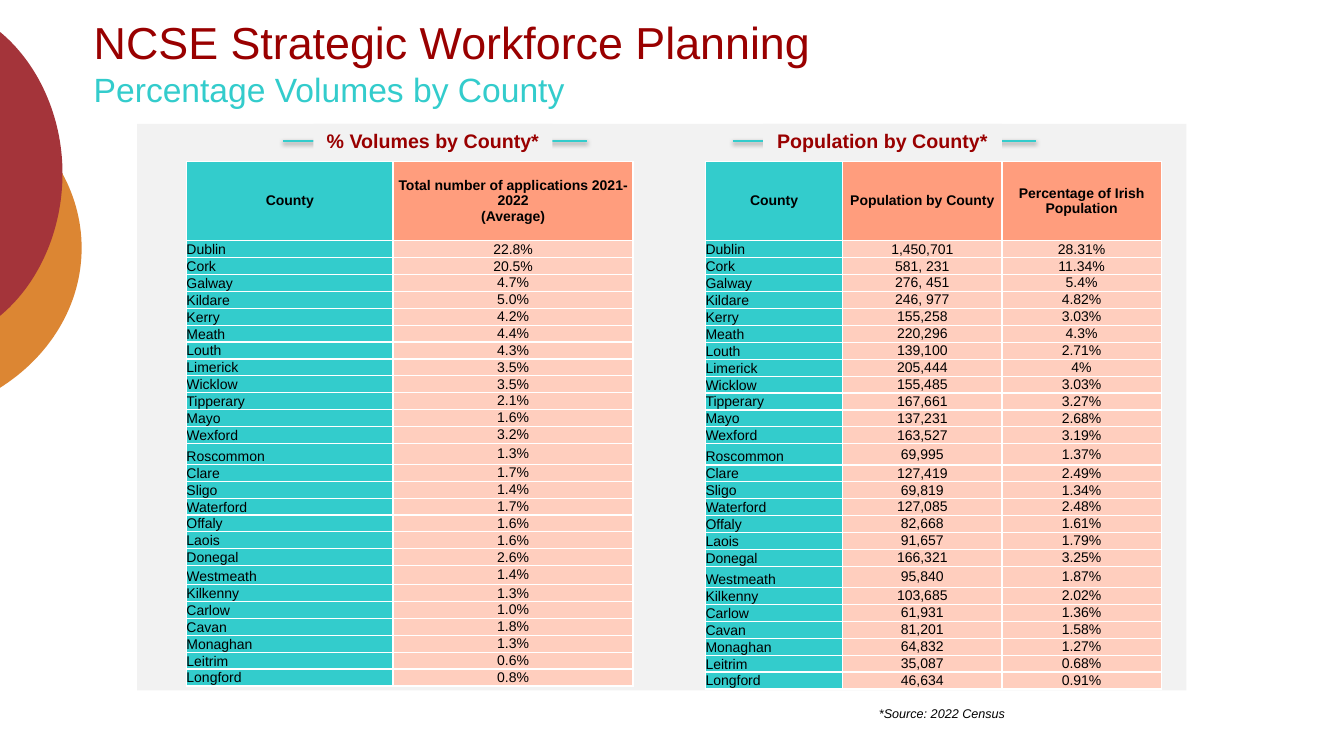
from lxml import etree
from pptx import Presentation
from pptx.dml.color import RGBColor
from pptx.enum.shapes import MSO_CONNECTOR as Connector, MSO_SHAPE as Shape
from pptx.enum.text import MSO_ANCHOR as Anchor, MSO_AUTO_SIZE as AutoSize, PP_ALIGN as Align
from pptx.oxml import parse_xml
from pptx.oxml.ns import nsdecls, qn
from pptx.util import Inches, Pt

RED, TEAL, BLACK, WHITE = "990000", "33CCCC", "000000", "FFFFFF"
PANEL, ORANGE, PEACH = "F2F2F2", "FF9D7D", "FFCEBE"
HEADER_HEIGHT = 0.79

# County, share of applications, population, share of population
COUNTIES = [
    ("Dublin", "22.8%", "1,450,701", "28.31%"),
    ("Cork", "20.5%", "581, 231", "11.34%"),
    ("Galway", "4.7%", "276, 451", "5.4%"),
    ("Kildare", "5.0%", "246, 977", "4.82%"),
    ("Kerry", "4.2%", "155,258", "3.03%"),
    ("Meath", "4.4%", "220,296", "4.3%"),
    ("Louth", "4.3%", "139,100", "2.71%"),
    ("Limerick", "3.5%", "205,444", "4%"),
    ("Wicklow", "3.5%", "155,485", "3.03%"),
    ("Tipperary", "2.1%", "167,661", "3.27%"),
    ("Mayo", "1.6%", "137,231", "2.68%"),
    ("Wexford", "3.2%", "163,527", "3.19%"),
    ("Roscommon", "1.3%", "69,995", "1.37%"),
    ("Clare", "1.7%", "127,419", "2.49%"),
    ("Sligo", "1.4%", "69,819", "1.34%"),
    ("Waterford", "1.7%", "127,085", "2.48%"),
    ("Offaly", "1.6%", "82,668", "1.61%"),
    ("Laois", "1.6%", "91,657", "1.79%"),
    ("Donegal", "2.6%", "166,321", "3.25%"),
    ("Westmeath", "1.4%", "95,840", "1.87%"),
    ("Kilkenny", "1.3%", "103,685", "2.02%"),
    ("Carlow", "1.0%", "61,931", "1.36%"),
    ("Cavan", "1.8%", "81,201", "1.58%"),
    ("Monaghan", "1.3%", "64,832", "1.27%"),
    ("Leitrim", "0.6%", "35,087", "0.68%"),
    ("Longford", "0.8%", "46,634", "0.91%"),
]


def color(value):
    return RGBColor.from_string(value)


class SlidePainter:
    def __init__(self, page, font="Arial"):
        self.page = page
        self.shapes = page.shapes
        self.font = font

    def style(self, para, size, ink, bold=False, italic=False, align=Align.LEFT):
        para.alignment = align
        font = para.font
        font.name, font.size, font.bold, font.italic = self.font, Pt(size), bold, italic
        font.color.rgb = color(ink)

    def paint(self, shape, fill):
        shape.shadow.inherit = False
        shape.fill.solid()
        shape.fill.fore_color.rgb = color(fill)
        shape.line.fill.background()

    def title(self, left, top, width, height, lines):
        box = self.shapes.title
        box.left, box.top, box.width, box.height = map(Inches, (left, top, width, height))
        frame = box.text_frame
        frame.auto_size, frame.vertical_anchor = AutoSize.NONE, Anchor.MIDDLE
        frame.margin_left, frame.margin_right = 0, Inches(0.04)
        frame.text = "\n".join(text for text, _, _ in lines)
        for para, (_, size, ink) in zip(frame.paragraphs, lines):
            self.style(para, size, ink)

    def half_disc(self, left, top, width, height, upper, fill):
        """Draw a disc cut at the left edge: a cubic upper quarter, mirrored about the middle."""
        right, bottom = left + width, top + height
        corners = [(Inches(x), Inches(y)) for x, y in
                   ((left, top), (right, top), (right, bottom), (left, bottom))]
        builder = self.shapes.build_freeform(*corners[0])
        builder.add_line_segments(corners[1:], close=True)
        shape = builder.convert_to_shape()

        lower = [(x, top + bottom - y) for x, y in reversed(upper[:-1])]
        outline = shape._element.spPr.find(".//" + qn("a:path"))
        for segment in list(outline):
            outline.remove(segment)
        for tag, points in (("a:moveTo", upper[:1]), ("a:cubicBezTo", upper[1:]),
                            ("a:cubicBezTo", lower), ("a:close", [])):
            segment = etree.SubElement(outline, qn(tag))
            for x, y in points:
                etree.SubElement(segment, qn("a:pt"),
                                 x=str(Inches(x - left)), y=str(Inches(y - top)))
        self.paint(shape, fill)

    def rectangle(self, left, top, width, height, fill):
        shape = self.shapes.add_shape(Shape.RECTANGLE, *map(Inches, (left, top, width, height)))
        self.paint(shape, fill)
        return shape

    def line(self, left, right, y):
        rule = self.shapes.add_connector(Connector.STRAIGHT, *map(Inches, (left, y, right, y)))
        rule.line.color.rgb = color(TEAL)
        rule.line.width = Pt(1.5)
        rule._element.spPr.append(parse_xml(
            f'<a:effectLst {nsdecls("a")}><a:outerShdw blurRad="{Pt(3.1)}" dist="{Pt(1.6)}" '
            f'dir="5400000" rotWithShape="0"><a:srgbClr val="{BLACK}"><a:alpha val="38000"/>'
            '</a:srgbClr></a:outerShdw></a:effectLst>'))

    def heading(self, left, text):
        """Put a table heading over the middle of a teal rule."""
        self.line(left, left + 3.01, 1.4)
        label = self.rectangle(left + 0.3, 1.23, 2.37, 0.34, PANEL)
        label.text_frame.text = text
        self.style(label.text_frame.paragraphs[0], 14, RED, bold=True, align=Align.CENTER)

    def note(self, left, top, width, height, text):
        box = self.shapes.add_textbox(*map(Inches, (left, top, width, height)))
        frame = box.text_frame
        frame.word_wrap, frame.vertical_anchor = True, Anchor.MIDDLE
        frame.text = text
        self.style(frame.paragraphs[0], 9, BLACK, italic=True, align=Align.CENTER)

    def cell(self, cell, text, fill, anchor, bold, align):
        cell.margin_left = cell.margin_right = cell.margin_top = cell.margin_bottom = 0
        cell.vertical_anchor = anchor
        cell.text = text
        self.style(cell.text_frame.paragraphs[0], 10, BLACK, bold=bold, align=align)
        properties = cell._tc.get_or_add_tcPr()
        for side in ("a:lnL", "a:lnR", "a:lnT", "a:lnB"):
            border = etree.SubElement(properties, qn(side), w=str(Pt(1)))
            solid = etree.SubElement(border, qn("a:solidFill"))
            etree.SubElement(solid, qn("a:srgbClr"), val=WHITE)
        cell.fill.solid()
        cell.fill.fore_color.rgb = color(fill)

    def table(self, left, top, height, widths, rows, tall_rows):
        """Draw a county table; tall_rows maps row numbers to heights, the rest share what is left."""
        frame = self.shapes.add_table(len(rows), len(widths), *map(
            Inches, (left, top, sum(widths), height)))
        table = frame.table
        table.horz_banding = False
        for column, width in zip(table.columns, widths):
            column.width = Inches(width)
        plain = (height - sum(tall_rows.values())) / (len(rows) - len(tall_rows))
        for r, values in enumerate(rows):
            table.rows[r].height = Inches(tall_rows.get(r, plain))
            for c, text in enumerate(values):
                header, county = r == 0, c == 0
                fill = TEAL if county else ORANGE if header else PEACH
                name = county and not header
                self.cell(table.cell(r, c), text, fill, Anchor.BOTTOM if name else Anchor.MIDDLE,
                          header, Align.LEFT if name else Align.CENTER)


def main():
    deck = Presentation()
    deck.slide_width, deck.slide_height = Inches(40 / 3), Inches(7.5)
    painter = SlidePainter(deck.slides.add_slide(deck.slide_layouts[5]))

    painter.half_disc(-3.1, 0.75, 3.91, 3.42,
                      [(-0.02, 1.06), (0.5, 1.38), (0.81, 1.9), (0.81, 2.46)], "DC8633")
    painter.half_disc(-2.33, 0, 2.94, 3.45,
                      [(-0.02, 0.3), (0.38, 0.62), (0.62, 1.16), (0.62, 1.72)], "A4343A")
    painter.rectangle(1.36, 1.23, 10.41, 5.62, PANEL)
    painter.title(0.93, 0.11, 11.72, 1.01, [
        ("NCSE Strategic Workforce Planning", 32, RED),
        ("Percentage Volumes by County", 24, TEAL),
    ])

    painter.heading(2.81, "% Volumes by County*")
    volumes = [("County", "Total number of applications 2021-2022\v(Average)")]
    volumes += [(county, share) for county, share, _, _ in COUNTIES]
    painter.table(1.85, 1.6, 5.21, (2.05, 2.38), volumes, {0: HEADER_HEIGHT, 13: 0.21, 20: 0.19})

    painter.heading(7.27, "Population by County*")
    population = [("County", "Population by County", "Percentage of Irish Population")]
    population += [(county, people, share) for county, _, people, share in COUNTIES]
    painter.table(7, 1.6, 5.24, (1.36, 1.58, 1.58), population,
                  {0: HEADER_HEIGHT, 13: 0.21, 20: 0.21})

    painter.note(7.84, 6.95, 3.01, 0.25, "*Source: 2022 Census")
    deck.save("out.pptx")


if __name__ == "__main__":
    main()
